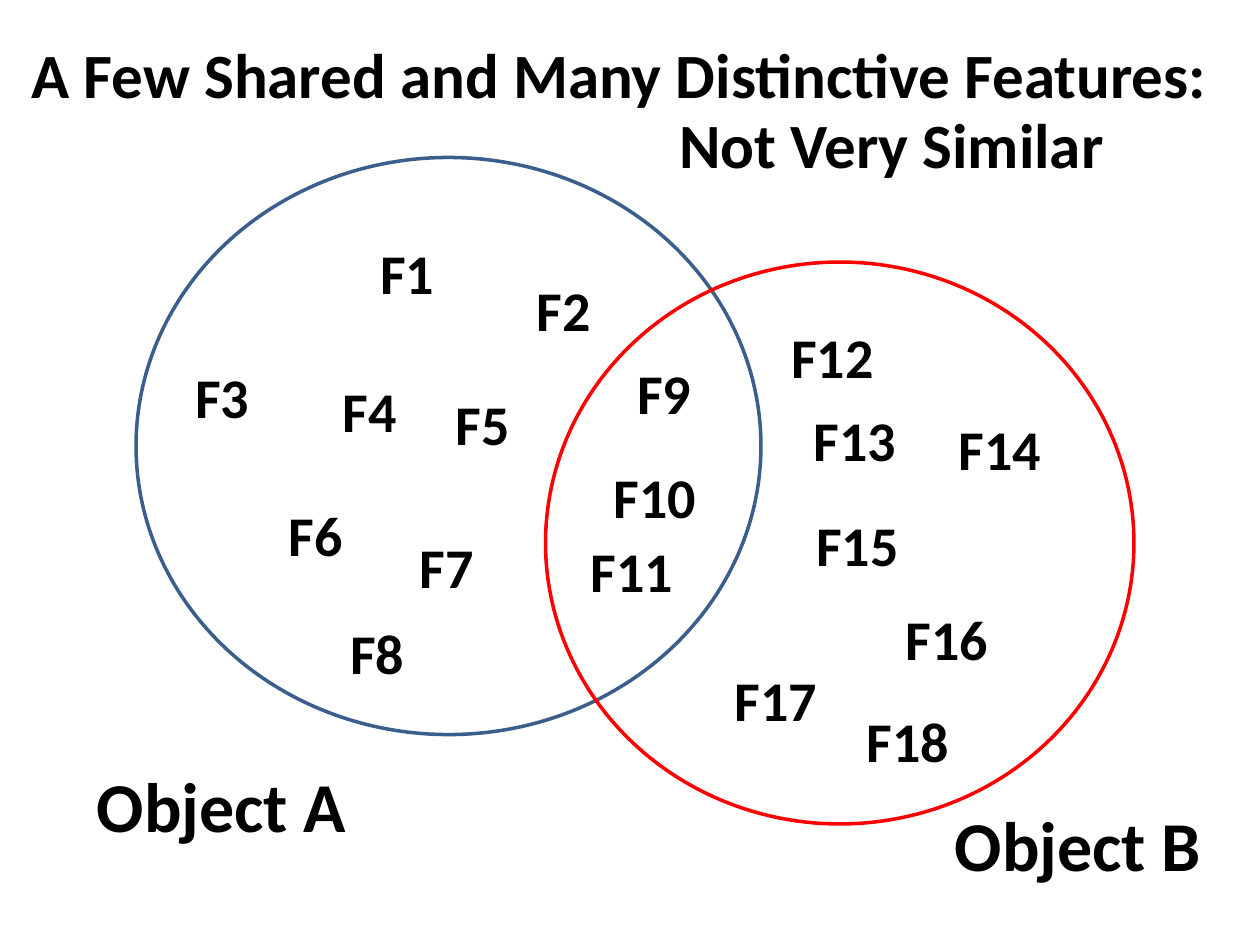
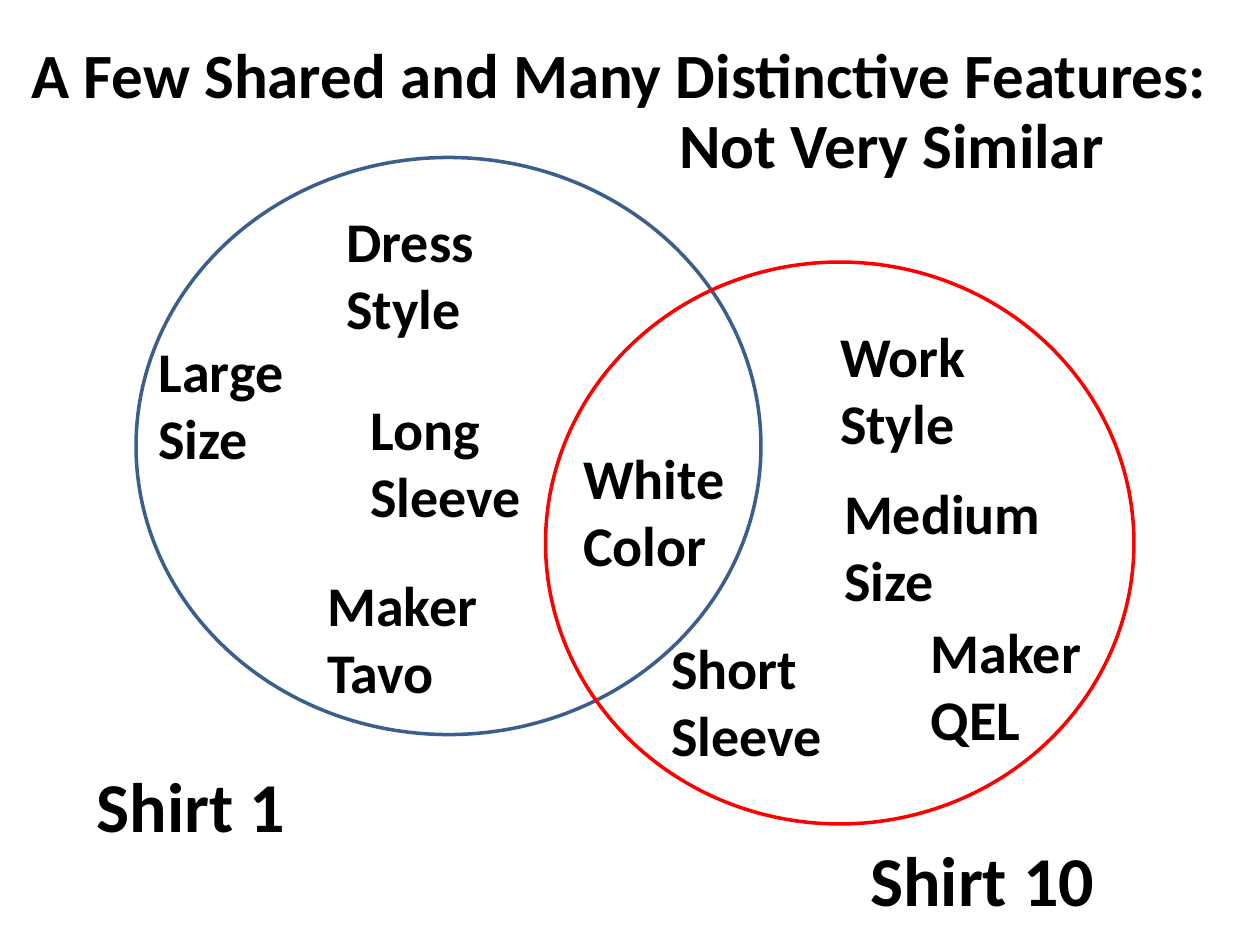
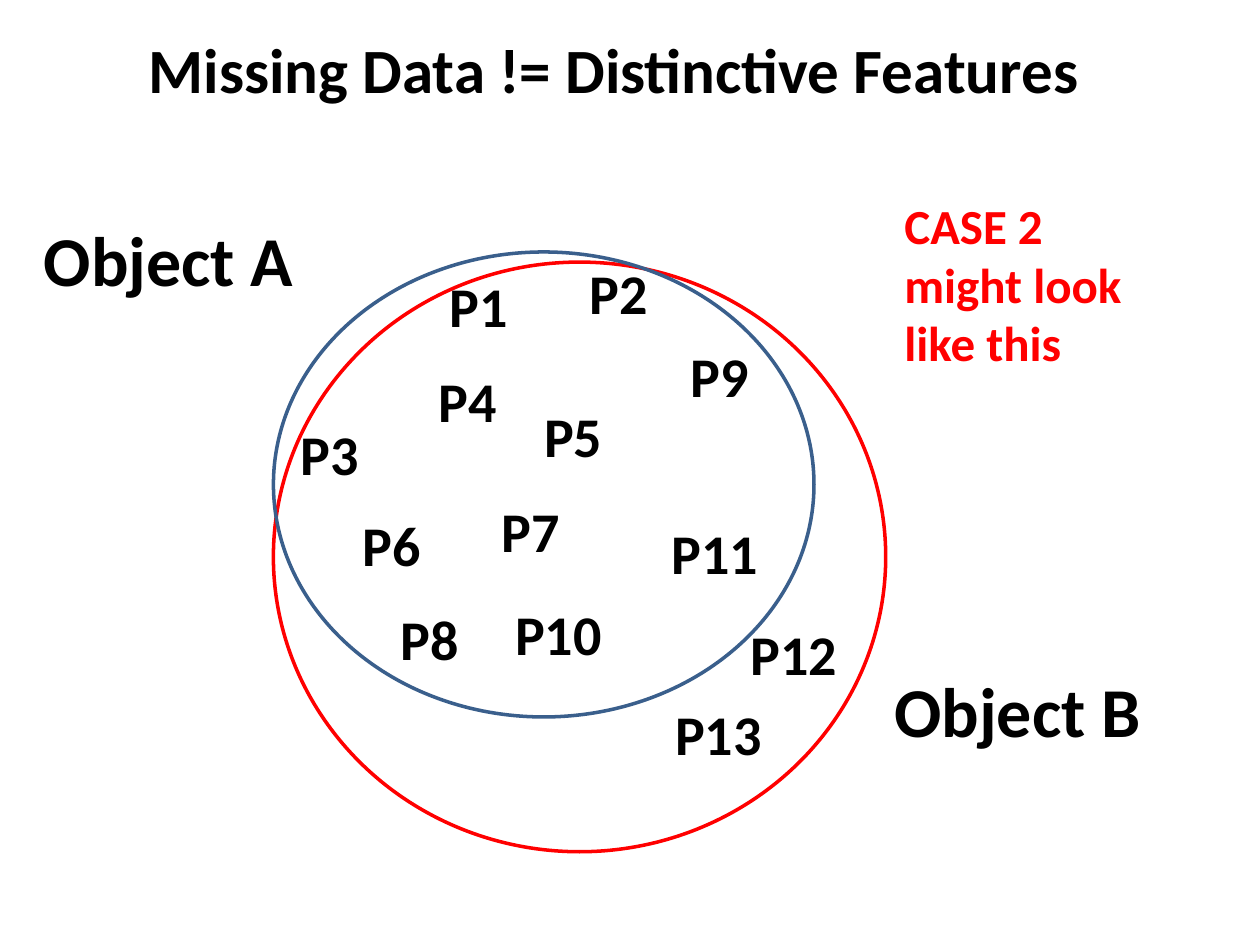
from pptx import Presentation
from pptx.dml.color import RGBColor
from pptx.enum.shapes import MSO_SHAPE
from pptx.enum.text import MSO_ANCHOR, MSO_AUTO_SIZE, PP_ALIGN
from pptx.util import Inches, Pt

# Shared look
BLUE = RGBColor(0x3A, 0x5F, 0x8C)
RED = RGBColor(0xFF, 0x00, 0x00)
BLACK = RGBColor(0x00, 0x00, 0x00)
FONT = {"name": "Calibri", "bold": True}
FRAME = {"word_wrap": True, "auto_size": MSO_AUTO_SIZE.NONE,
         "vertical_anchor": MSO_ANCHOR.TOP}
SIDES = ("left", "top", "width", "height")
TAG = (0.92, 0.64)  # size of a one-word feature label


def write(shape, text, size, color=BLACK):
    frame = shape.text_frame
    for key, val in FRAME.items():
        setattr(frame, key, val)
    frame.text = text
    for para in frame.paragraphs:
        for key, val in FONT.items():
            setattr(para.font, key, val)
        para.font.size = Pt(size)
        para.font.color.rgb = color


def label(slide, text, box, size, color=BLACK):
    write(slide.shapes.add_textbox(*map(Inches, box)), text, size, color)


# Titles: text, box, alignment
SHARED = ("A Few Shared and Many Distinctive Features:\nNot Very Similar",
          (0, 0.29, 9.83, 1.3), PP_ALIGN.CENTER)
MISSING = ("Missing Data != Distinctive Features",
           (1.08, 0.25, 7.99, 0.66), PP_ALIGN.LEFT)
INDENT = Inches(4.32)  # pushes the second title line to the right

# Circles, from back to front
APART = [((1.08, 1.25, 4.96, 4.58), BLUE), ((4.33, 2.08, 4.67, 4.46), RED)]
NESTED = [((2.17, 2.08, 4.86, 4.68), RED), ((2.17, 2, 4.29, 3.69), BLUE)]

# Numbered features, F1 to F18 and P1 to P13
F_SPOTS = [(2.92, 1.84), (4.16, 2.14), (1.45, 2.83), (2.62, 2.94),
           (3.52, 3.04), (2.19, 3.92), (3.23, 4.18), (2.68, 4.86),
           (4.96, 2.8), (4.77, 3.62), (4.59, 4.21), (6.18, 2.51),
           (6.36, 3.17), (7.51, 3.24), (6.38, 4), (7.09, 4.75),
           (5.73, 5.23), (6.78, 5.56)]
P_SPOTS = [(3.47, 2.11), (4.58, 2), (2.29, 3.28), (3.38, 2.86),
           (4.22, 3.14), (2.78, 4), (3.88, 3.89), (3.08, 4.75),
           (5.38, 2.66), (3.99, 4.71), (5.23, 4.07), (5.86, 4.87),
           (5.26, 5.5)]
F_TAGS = [(f"F{n}", spot + TAG) for n, spot in enumerate(F_SPOTS, 1)]
P_TAGS = [(f"P{n}", spot + TAG) for n, spot in enumerate(P_SPOTS, 1)]

# Shirt features
SHIRTS = [("Large Size", (1.16, 2.62, 1.43, 1.18)),
          ("Maker Tavo", (2.5, 4.48, 1.92, 1.18)),
          ("Long Sleeve", (2.84, 3.08, 1.93, 1.18)),
          ("White\vColor", (4.53, 3.47, 1.49, 1.18)),
          ("Dress Style", (2.65, 1.59, 2.16, 1.18)),
          ("Work Style", (6.57, 2.5, 2.07, 1.18)),
          ("Medium Size", (6.6, 3.75, 1.88, 1.18)),
          ("Short Sleeve", (5.23, 4.98, 1.93, 1.18)),
          ("Maker QEL", (7.29, 4.85, 1.92, 1.18))]

# Slides: title, circles, features, names of the two sets
PAGES = [
    (SHARED, APART, F_TAGS, [("Object A", (0.67, 6, 2.9, 0.79)),
                             ("Object B", (7.48, 6.31, 2.88, 0.77))]),
    (SHARED, APART, SHIRTS, [("Shirt 1", (0.67, 6, 2.9, 0.79)),
                             ("Shirt 10", (6.81, 6.59, 2.88, 0.77))]),
    (MISSING, NESTED, P_TAGS, [("Object A", (0.25, 1.67, 2.9, 0.79)),
                               ("Object B", (7, 5.25, 2.44, 0.77))]),
]

deck = Presentation()
deck.slide_width, deck.slide_height = Inches(10), Inches(7.5)

for (head, area, align), rings, tags, names in PAGES:
    slide = deck.slides.add_slide(deck.slide_layouts[5])

    # Title
    title = slide.shapes.title
    for side, val in zip(SIDES, area):
        setattr(title, side, Inches(val))
    write(title, head, 36)
    for para in title.text_frame.paragraphs:
        para.alignment = align
        para.line_spacing = 0.92
    for para in title.text_frame.paragraphs[1:]:
        para._p.get_or_add_pPr().set("marL", str(INDENT))

    # Circles
    for box, color in rings:
        ring = slide.shapes.add_shape(MSO_SHAPE.OVAL, *map(Inches, box))
        ring.shadow.inherit = False
        ring.fill.background()
        ring.line.color.rgb = color
        ring.line.width = Pt(2)

    # Features and set names
    for text, box in tags:
        label(slide, text, box, 32)
    for text, box in names:
        label(slide, text, box, 40)

# Remark on the last slide
label(slide, "CASE 2 might look like this", (7.08, 1.5, 2, 1.51), 28, RED)

deck.save("out.pptx")
